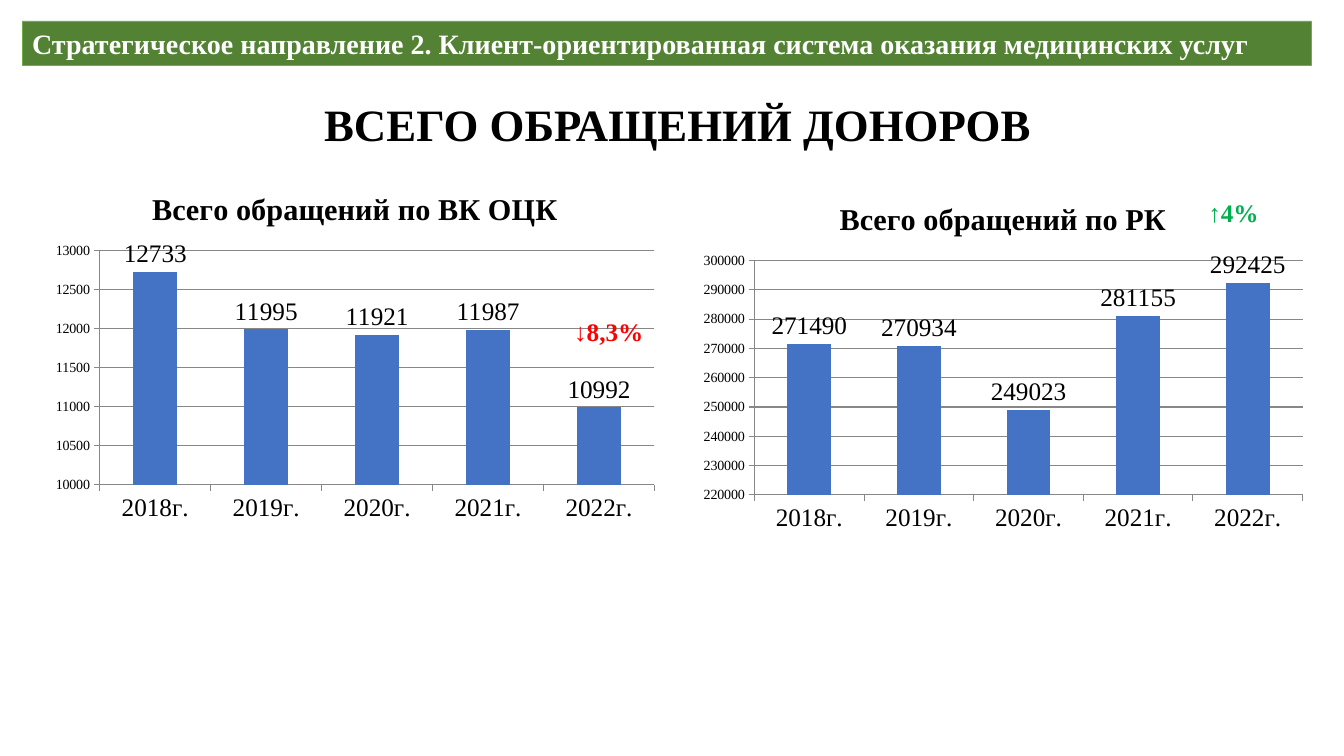
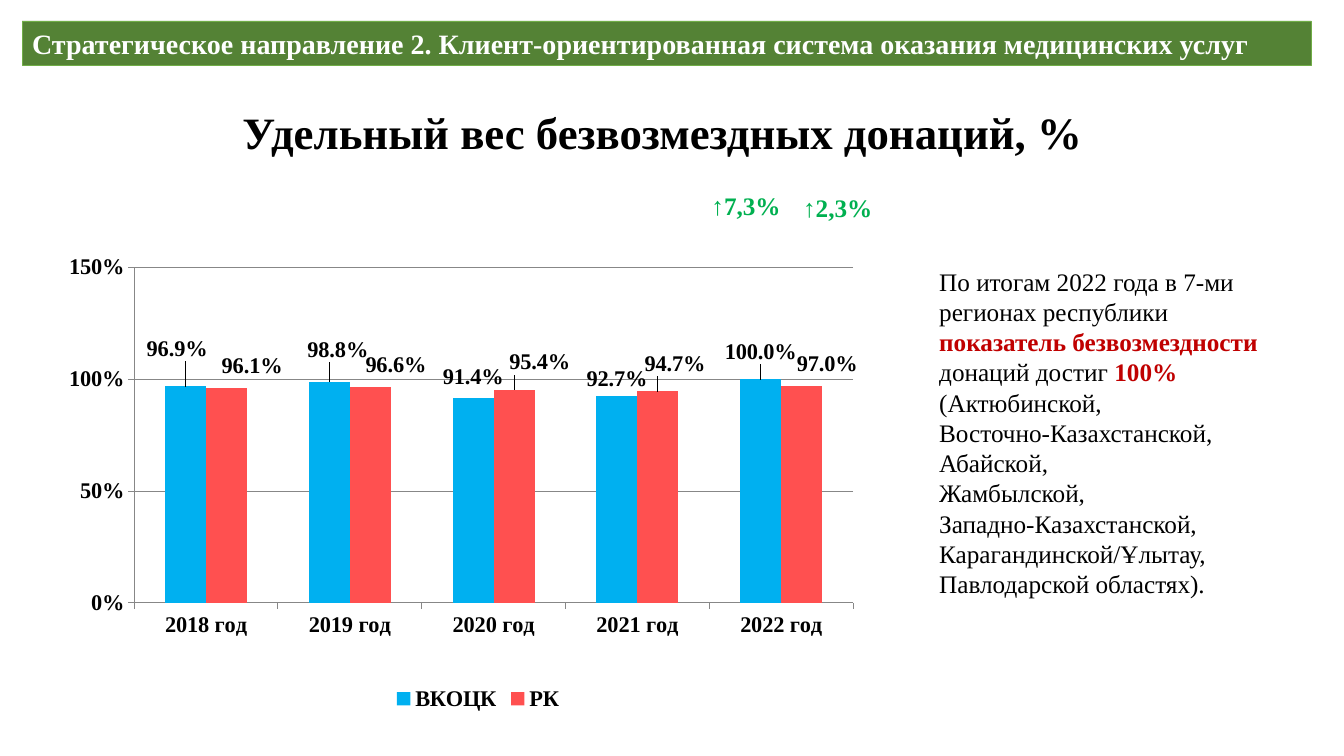
import pptx
import pptx.chart.data
import pptx.dml.color
import pptx.enum.chart
import pptx.enum.shapes
import pptx.enum.text
import pptx.oxml
import pptx.oxml.ns
import pptx.util

Cm = pptx.util.Cm
Pt = pptx.util.Pt
RGBColor = pptx.dml.color.RGBColor
qn = pptx.oxml.ns.qn
ALIGN = pptx.enum.text.PP_ALIGN
ANCHOR = pptx.enum.text.MSO_ANCHOR

FONT = "Times New Roman"
WHITE = RGBColor(0xFF, 0xFF, 0xFF)
BLACK = RGBColor(0, 0, 0)
BAND_FILL = RGBColor(0x54, 0x82, 0x35)
BAND_LINE = RGBColor(0x70, 0xAD, 0x47)
BLUE = RGBColor(0x44, 0x72, 0xC4)
SKY = RGBColor(0x00, 0xB0, 0xF0)
CORAL = RGBColor(0xFF, 0x50, 0x50)
GREY = RGBColor(0x87, 0x87, 0x87)
RISE = RGBColor(0x00, 0xB0, 0x50)
FALL = RGBColor(0xFF, 0, 0)
ACCENT = RGBColor(0xC0, 0, 0)

BAND_TEXT = ("Стратегическое направление 2. Клиент-ориентированная "
             "система оказания медицинских услуг")
BAND_BOX = (0.56, 0.53, 32.49, 1.12)
YEARS = range(2018, 2023)


def lengths(box):
    return [Cm(v) for v in box]


def set_font(font, size, bold=False, color=BLACK):
    font.name = FONT
    font.size = Pt(size)
    font.bold = bold
    font.color.rgb = color


def write_text(tf, paragraphs, size=18, bold=False, color=BLACK,
               align=ALIGN.LEFT, spacing=1.0):
    for i, runs in enumerate(paragraphs):
        p = tf.add_paragraph() if i else tf.paragraphs[0]
        p.alignment = align
        p.line_spacing = spacing
        for text, strong in runs:
            r = p.add_run()
            r.text = text
            set_font(r.font, size, bold or strong, ACCENT if strong else color)


def add_text(slide, box, paragraphs, wrap=True, anchor=ANCHOR.TOP, **fmt):
    tf = slide.shapes.add_textbox(*lengths(box)).text_frame
    tf.word_wrap = wrap
    tf.vertical_anchor = anchor
    write_text(tf, paragraphs, **fmt)


def add_title(slide, box, text, align=ALIGN.LEFT):
    add_text(slide, box, [[(text, False)]], anchor=ANCHOR.MIDDLE,
             size=32, bold=True, align=align, spacing=0.9)


def add_change(slide, box, dx, dy, text, color, width=2.29):
    add_text(slide, (box[0] + dx, box[1] + dy, width, 1.02),
             [[(text, False)]], wrap=False, bold=True, color=color)


def new_slide(prs):
    slide = prs.slides.add_slide(prs.slide_layouts[6])
    sp = slide.shapes.add_shape(pptx.enum.shapes.MSO_SHAPE.RECTANGLE,
                                *lengths(BAND_BOX))
    sp.shadow.inherit = False
    sp.fill.solid()
    sp.fill.fore_color.rgb = BAND_FILL
    sp.line.color.rgb = BAND_LINE
    sp.line.width = Pt(0.5)
    sp.text_frame.word_wrap = True
    write_text(sp.text_frame, [[(BAND_TEXT, False)]],
               size=20, bold=True, color=WHITE)
    return slide


def manual_layout(parent, position, **values):
    for old in parent.findall(qn("c:layout")):
        parent.remove(old)
    layout = pptx.oxml.parse_xml(
        '<c:layout xmlns:c="http://schemas.openxmlformats.org/'
        'drawingml/2006/chart"><c:manualLayout/></c:layout>')
    for tag, value in values.items():
        child = layout[0].makeelement(qn(f"c:{tag}"), {"val": str(value)})
        layout[0].append(child)
    parent.insert(position, layout)


def add_columns(slide, box, cats, series, low, high, step, number_format,
                label_format, cat_size, val_size, label_size, bold=False):
    data = pptx.chart.data.CategoryChartData(number_format=number_format)
    data.categories = cats
    for name, values, _ in series:
        data.add_series(name, values)
    chart = slide.shapes.add_chart(
        pptx.enum.chart.XL_CHART_TYPE.COLUMN_CLUSTERED,
        *lengths(box), data).chart
    chart.has_title = False
    chart.has_legend = False
    chart.font.name = FONT
    plot = chart.plots[0]
    plot.gap_width = 150
    plot.overlap = 0
    plot.vary_by_categories = False
    axis = chart.value_axis
    axis.minimum_scale, axis.maximum_scale, axis.major_unit = low, high, step
    axis.has_major_gridlines = True
    axis.major_gridlines.format.line.color.rgb = GREY
    axis.tick_labels.number_format = number_format
    axis.tick_labels.number_format_is_linked = False
    for ax, size in ((axis, val_size), (chart.category_axis, cat_size)):
        ax.major_tick_mark = pptx.enum.chart.XL_TICK_MARK.OUTSIDE
        ax.format.line.color.rgb = GREY
        set_font(ax.tick_labels.font, size, bold)
    for s, (_, _, color) in zip(plot.series, series):
        s.format.fill.solid()
        s.format.fill.fore_color.rgb = color
        s.invert_if_negative = False
        labels = s.data_labels
        labels.show_value = True
        labels.number_format = label_format
        labels.number_format_is_linked = False
        labels.position = pptx.enum.chart.XL_LABEL_POSITION.OUTSIDE_END
        set_font(labels.font, label_size, bold)
    return chart


def shift_labels(series, offsets, size, number_format):
    for i, (x, y) in enumerate(offsets):
        label = series.points[i].data_label
        set_font(label.font, size, True)
        label.position = pptx.enum.chart.XL_LABEL_POSITION.OUTSIDE_END
        d = series._element.xpath(f'c:dLbls/c:dLbl[c:idx/@val="{i}"]')[0]
        manual_layout(d, 1, x=x, y=y)
        d.insert(2, d.makeelement(qn("c:numFmt"), {
            "formatCode": number_format, "sourceLinked": "0"}))


def visits_chart(slide, box, title, values, low, high, step):
    chart = add_columns(slide, box, [f"{y}г." for y in YEARS],
                        [(title, values, BLUE)], low, high, step,
                        "General", "General", 18, 10, 18)
    chart.has_title = True
    tf = chart.chart_title.text_frame
    write_text(tf, [[(title, False)]], size=21.6, bold=True,
               align=ALIGN.CENTER)
    chart.chart_title.include_in_layout = False


def share_chart(slide, box):
    chart = add_columns(
        slide, box, [f"{y} год" for y in YEARS],
        [("ВКОЦК", (0.969, 0.988, 0.914, 0.927, 1), SKY),
         ("РК", (0.961, 0.966, 0.954, 0.947, 0.97), CORAL)],
        0, 1.5, 0.5, "0%", "0.0%", 16, 16, 16, bold=True)
    manual_layout(chart._chartSpace.chart.plotArea, 0, layoutTarget="inner",
                  xMode="edge", yMode="edge", x=0.095, y=0.138,
                  w=0.847, h=0.645)
    offsets = (
        ((-0.01, -0.04), (0.01, -0.03), (0, -0.01), (0, 0), (0, -0.02)),
        ((0.03, -0.01), (0.03, -0.01), (0.03, -0.02), (0.02, -0.02),
         (0.03, -0.01)))
    for s, shifts in zip(chart.plots[0].series, offsets):
        shift_labels(s, shifts, 16, "0.0%")
    chart.has_legend = True
    chart.legend.position = pptx.enum.chart.XL_LEGEND_POSITION.BOTTOM
    chart.legend.include_in_layout = False
    set_font(chart.legend.font, 16, True)


def regions_note(slide, box):
    regions = ("Восточно-Казахстанской,", "Абайской,", "Жамбылской,",
               "Западно-Казахстанской,", "Карагандинской/Ұлытау,",
               "Павлодарской областях).")
    summary = [("По итогам 2022 года в 7-ми регионах республики ", False),
               ("показатель безвозмездности ", True),
               ("донаций достиг ", False), ("100% ", True),
               ("(Актюбинской,", False)]
    add_text(slide, box, [summary] + [[(name, False)] for name in regions])


def visits_slide(prs):
    slide = new_slide(prs)
    add_title(slide, (7.92, 2.01, 18.69, 2.39), "ВСЕГО ОБРАЩЕНИЙ ДОНОРОВ")
    centre = (1.09, 4.32, 15.72, 9.02)
    country = (17.42, 4.57, 15.72, 9.02)
    visits_chart(slide, centre, "Всего обращений по ВК ОЦК",
                 (12733, 11995, 11921, 11987, 10992), 10000, 13000, 500)
    visits_chart(slide, country, "Всего обращений по РК",
                 (271490, 270934, 249023, 281155, 292425),
                 220000, 300000, 10000)
    add_change(slide, centre, 13.13, 3.53, "↓8,3%", FALL)
    add_change(slide, country, 12.78, 0.28, "↑4%", RISE, width=1.8)


def share_slide(prs):
    slide = new_slide(prs)
    add_title(slide, (1.22, 2.41, 30.96, 1.98),
              "Удельный вес безвозмездных донаций, %", ALIGN.CENTER)
    box = (1.35, 4.93, 21.39, 13.11)
    share_chart(slide, box)
    regions_note(slide, (23.42, 6.58, 8.66, 8.71))
    add_change(slide, box, 16.33, -0.26, "↑7,3%", RISE)
    add_change(slide, box, 18.64, -0.21, "↑2,3%", RISE)


def main():
    prs = pptx.Presentation()
    prs.slide_width, prs.slide_height = Cm(33.87), Cm(19.05)
    visits_slide(prs)
    share_slide(prs)
    prs.save("out.pptx")


if __name__ == "__main__":
    main()
